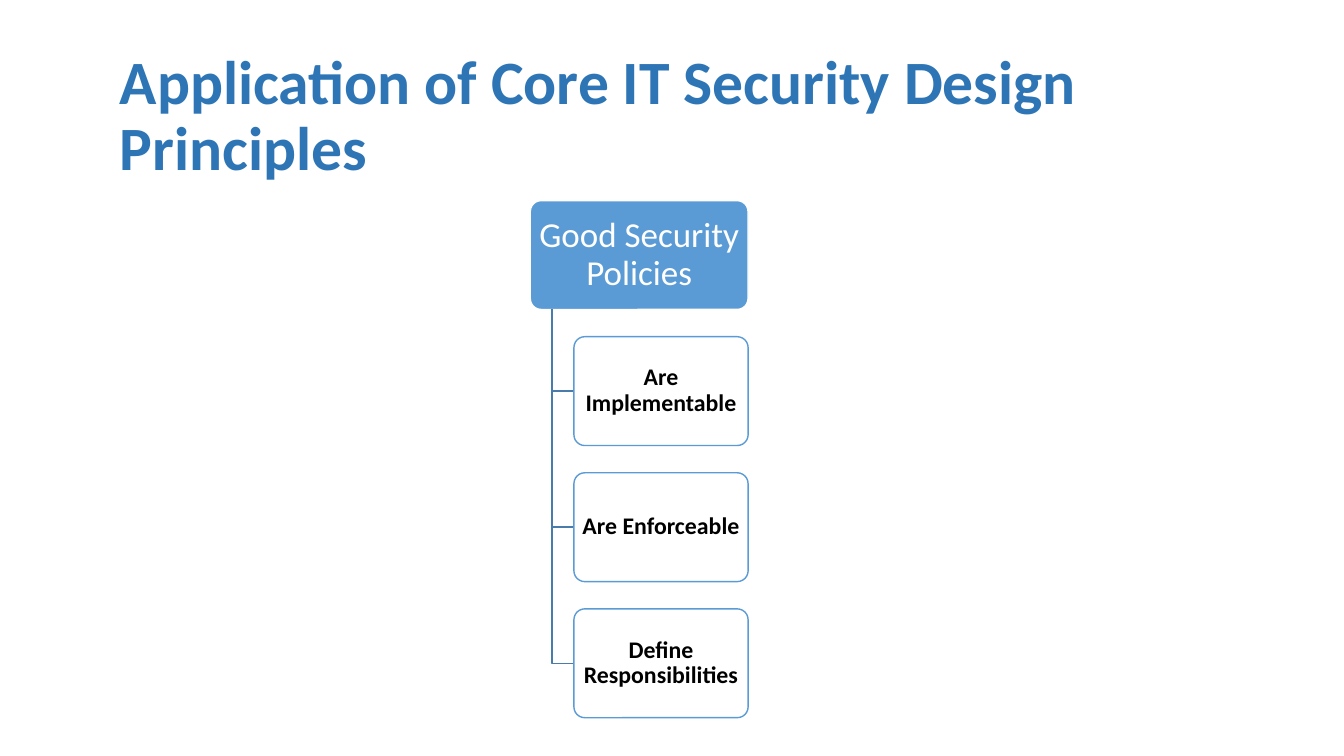
from pptx import Presentation
from pptx.dml.color import RGBColor
from pptx.enum.shapes import MSO_SHAPE
from pptx.enum.text import MSO_ANCHOR, PP_ALIGN
from pptx.util import Inches, Pt


def color(hex_code):
    return RGBColor.from_string(hex_code)


def write(frame, text, size, hex_code, bold, align, inset_x, inset_y):
    frame.word_wrap = True
    frame.vertical_anchor = MSO_ANCHOR.MIDDLE
    frame.margin_left = frame.margin_right = Inches(inset_x)
    frame.margin_top = frame.margin_bottom = Inches(inset_y)
    paragraph = frame.paragraphs[0]
    paragraph.alignment = align
    paragraph.line_spacing = 0.9
    run = paragraph.add_run()
    run.text = text
    run.font.name = "Calibri"
    run.font.size = Pt(size)
    run.font.bold = bold
    run.font.color.rgb = color(hex_code)


deck = Presentation()
deck.slide_width, deck.slide_height = Inches(13.33), Inches(7.5)
slide = deck.slides.add_slide(deck.slide_layouts[6])
shapes = slide.shapes

# Title
title = shapes.add_textbox(Inches(1.09), Inches(0.44), Inches(10.75), Inches(1.45))
write(title.text_frame, "Application of Core IT Security Design Principles",
      44, "2E75B6", True, PP_ALIGN.LEFT, 0.1, 0.05)

# Hierarchy grid: one row per box, children indented under the root
root_left, root_width = 5.26, 2.16
top, box_height, row_step = 1.99, 1.08, 1.35
indent = root_width / 5
trunk_x = root_left + indent / 2
child_left = root_left + indent

boxes = [("Good Security Policies", root_left, "5B9BD5", "FFFFFF", 25, False, 0.05, 0.03)]
for policy in ["Are Implementable", "Are Enforceable", "Define Responsibilities"]:
    boxes.append((policy, child_left, "FFFFFF", "000000", 17, True, 0.04, 0.02))

for row, (text, left, fill, ink, size, bold, inset_x, inset_y) in enumerate(boxes):
    box_top = top + row * row_step

    # Branch from the root's underside to the child's left side
    if row:
        branch_y = Inches(box_top + box_height / 2)
        outline = shapes.build_freeform(Inches(trunk_x), Inches(top + box_height))
        outline.add_line_segments([(Inches(trunk_x), branch_y),
                                   (Inches(child_left), branch_y)], close=False)
        branch = outline.convert_to_shape()
        branch.shadow.inherit = False
        branch.fill.background()
        branch.line.color.rgb = color("497CAB")
        branch.line.width = Pt(1)

    # Box with its label
    box = shapes.add_shape(MSO_SHAPE.ROUNDED_RECTANGLE, Inches(left), Inches(box_top),
                           Inches(root_left + root_width - left), Inches(box_height))
    box.adjustments[0] = 0.1
    box.shadow.inherit = False
    box.fill.solid()
    box.fill.fore_color.rgb = color(fill)
    box.line.color.rgb = color("5B9BD5" if row else "FFFFFF")
    box.line.width = Pt(1)
    write(box.text_frame, text, size, ink, bold, PP_ALIGN.CENTER, inset_x, inset_y)

deck.save("out.pptx")
